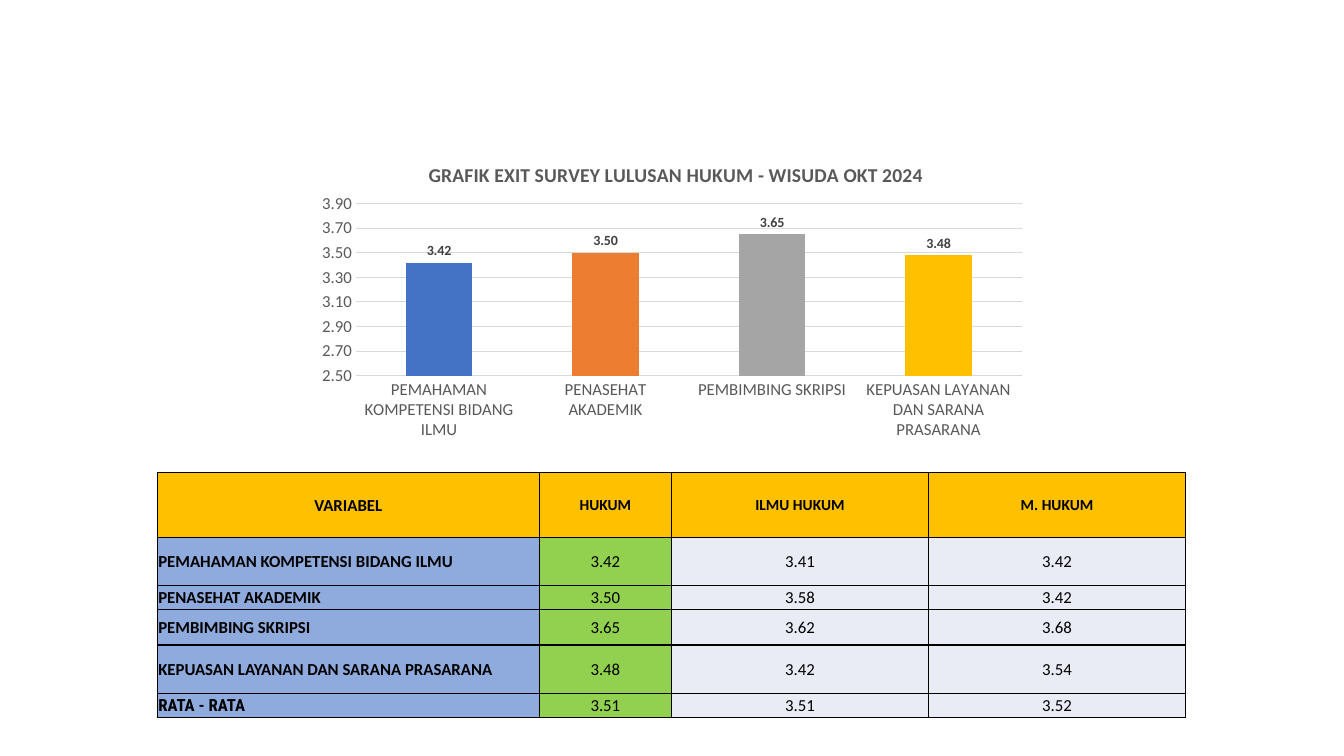
import lxml.etree
import pptx
import pptx.chart.data
import pptx.dml.color
import pptx.enum.chart
import pptx.enum.text
import pptx.oxml.ns
import pptx.util

Inches = pptx.util.Inches
Pt = pptx.util.Pt
qn = pptx.oxml.ns.qn

VARIABLES = ["PEMAHAMAN KOMPETENSI BIDANG ILMU", "PENASEHAT AKADEMIK",
             "PEMBIMBING SKRIPSI", "KEPUASAN LAYANAN DAN SARANA PRASARANA"]
FACULTY_SCORES = [3.42, 3.50, 3.65, 3.48]
BAR_COLORS = ["4472C4", "ED7D31", "A5A5A5", "FFC000"]

HEADINGS = ["VARIABEL", "HUKUM", "ILMU HUKUM", "M. HUKUM"]
PROGRAM_SCORES = [(3.41, 3.42), (3.58, 3.42), (3.62, 3.68), (3.42, 3.54)]
AVERAGES = ["RATA - RATA", 3.51, 3.51, 3.52]
COLUMN_WIDTHS = [3.79, 1.31, 2.55, 2.55]
ROW_HEIGHTS = [0.64, 0.48, 0.24, 0.35, 0.48, 0.24]
COLUMN_FILLS = ["8FAADC", "92D050", "E9EBF5", "E9EBF5"]


def color(value):
    return pptx.dml.color.RGBColor.from_string(value)


def style_font(font, size, value, bold=False, name="Calibri"):
    font.name = name
    font.size = Pt(size)
    font.bold = bold
    font.color.rgb = color(value)


def place_in_chart(element, index, **fractions):
    """Set a manual layout, in fractions of the chart area."""
    for layout in element.findall(qn("c:layout")):
        element.remove(layout)
    layout = lxml.etree.Element(qn("c:layout"))
    manual = lxml.etree.SubElement(layout, qn("c:manualLayout"))
    settings = {"xMode": "edge", "yMode": "edge", **fractions}
    if "w" in fractions:
        settings = {"layoutTarget": "inner", **settings}
    for tag, value in settings.items():
        lxml.etree.SubElement(manual, qn("c:" + tag)).set("val", str(value))
    element.insert(index, layout)


def add_survey_chart(slide, left, top, width, height):
    data = pptx.chart.data.CategoryChartData(number_format="0.00")
    data.categories = VARIABLES
    data.add_series("Series 1", FACULTY_SCORES)
    chart = slide.shapes.add_chart(
        pptx.enum.chart.XL_CHART_TYPE.COLUMN_CLUSTERED,
        Inches(left), Inches(top), Inches(width), Inches(height), data).chart
    style_font(chart.font, 10, "000000")
    chart.has_legend = False

    # Title
    chart.has_title = True
    title = chart.chart_title
    title.include_in_layout = False
    title.text_frame.text = "GRAFIK EXIT SURVEY LULUSAN HUKUM - WISUDA OKT 2024"
    style_font(title.text_frame.paragraphs[0].font, 14, "595959", bold=True)
    place_in_chart(title._element, 1, x=0.16, y=0.06)
    plot_area = chart._chartSpace.find(".//" + qn("c:plotArea"))
    place_in_chart(plot_area, 0, x=0.065, y=0.21, w=0.915, h=0.56)

    # Axes
    for axis in (chart.category_axis, chart.value_axis):
        axis.major_tick_mark = pptx.enum.chart.XL_TICK_MARK.NONE
        axis.format.line.fill.background()
        style_font(axis.tick_labels.font, 12, "595959")
    value_axis = chart.value_axis
    value_axis.minimum_scale = 2.5
    value_axis.maximum_scale = 3.9
    value_axis.major_unit = 0.2
    value_axis.tick_labels.number_format = "0.00"
    value_axis.tick_labels.number_format_is_linked = False
    gridline = value_axis.major_gridlines.format.line
    gridline.color.rgb = color("D9D9D9")
    gridline.width = Pt(0.75)

    # Bars and their labels
    plot = chart.plots[0]
    plot.gap_width = 150
    plot.vary_by_categories = False
    series = plot.series[0]
    for index, bar_color in enumerate(BAR_COLORS):
        fill = series.points[index].format.fill
        fill.solid()
        fill.fore_color.rgb = color(bar_color)
    labels = series.data_labels
    labels.show_value = True
    labels.number_format = "0.00"
    labels.number_format_is_linked = False
    labels.position = pptx.enum.chart.XL_LABEL_POSITION.OUTSIDE_END
    style_font(labels.font, 10, "404040", bold=True)


def add_borders(cell):
    properties = cell._tc.get_or_add_tcPr()
    for side in ("lnL", "lnR", "lnT", "lnB"):
        line = lxml.etree.SubElement(properties, qn("a:" + side), w=str(Pt(1)))
        solid = lxml.etree.SubElement(line, qn("a:solidFill"))
        lxml.etree.SubElement(solid, qn("a:srgbClr"), val="000000")


def fill_cell(cell, content, fill, centered, **font):
    add_borders(cell)
    cell.fill.solid()
    cell.fill.fore_color.rgb = color(fill)
    cell.margin_left = cell.margin_right = cell.margin_top = Inches(0.01)
    cell.margin_bottom = 0
    cell.vertical_anchor = pptx.enum.text.MSO_ANCHOR.MIDDLE
    cell.text = content if isinstance(content, str) else f"{content:.2f}"
    paragraph = cell.text_frame.paragraphs[0]
    alignment = pptx.enum.text.PP_ALIGN
    paragraph.alignment = alignment.CENTER if centered else alignment.LEFT
    style_font(paragraph.font, value="000000", **font)


def add_score_table(slide, left, top):
    rows = [HEADINGS]
    for variable, score, programs in zip(VARIABLES, FACULTY_SCORES, PROGRAM_SCORES):
        rows.append([variable, score, *programs])
    rows.append(AVERAGES)

    table = slide.shapes.add_table(
        len(rows), len(HEADINGS), Inches(left), Inches(top),
        Inches(sum(COLUMN_WIDTHS)), Inches(sum(ROW_HEIGHTS))).table
    for column, width in zip(table.columns, COLUMN_WIDTHS):
        column.width = Inches(width)
    for row, height in zip(table.rows, ROW_HEIGHTS):
        row.height = Inches(height)

    for r, row in enumerate(rows):
        for c, content in enumerate(row):
            header, first = r == 0, c == 0
            average_label = first and row is AVERAGES
            fill_cell(table.cell(r, c), content,
                      fill="FFC000" if header else COLUMN_FILLS[c],
                      centered=header or not first,
                      size=11 if header and not first else 12,
                      bold=header or first,
                      name="Roboto Condensed" if average_label else "Calibri")


def main():
    presentation = pptx.Presentation()
    presentation.slide_width = Inches(13.33)
    presentation.slide_height = Inches(7.5)
    slide = presentation.slides.add_slide(presentation.slide_layouts[6])
    add_survey_chart(slide, 3.06, 1.38, 7.22, 3.05)
    add_score_table(slide, 1.56, 4.69)
    presentation.save("out.pptx")


if __name__ == "__main__":
    main()
